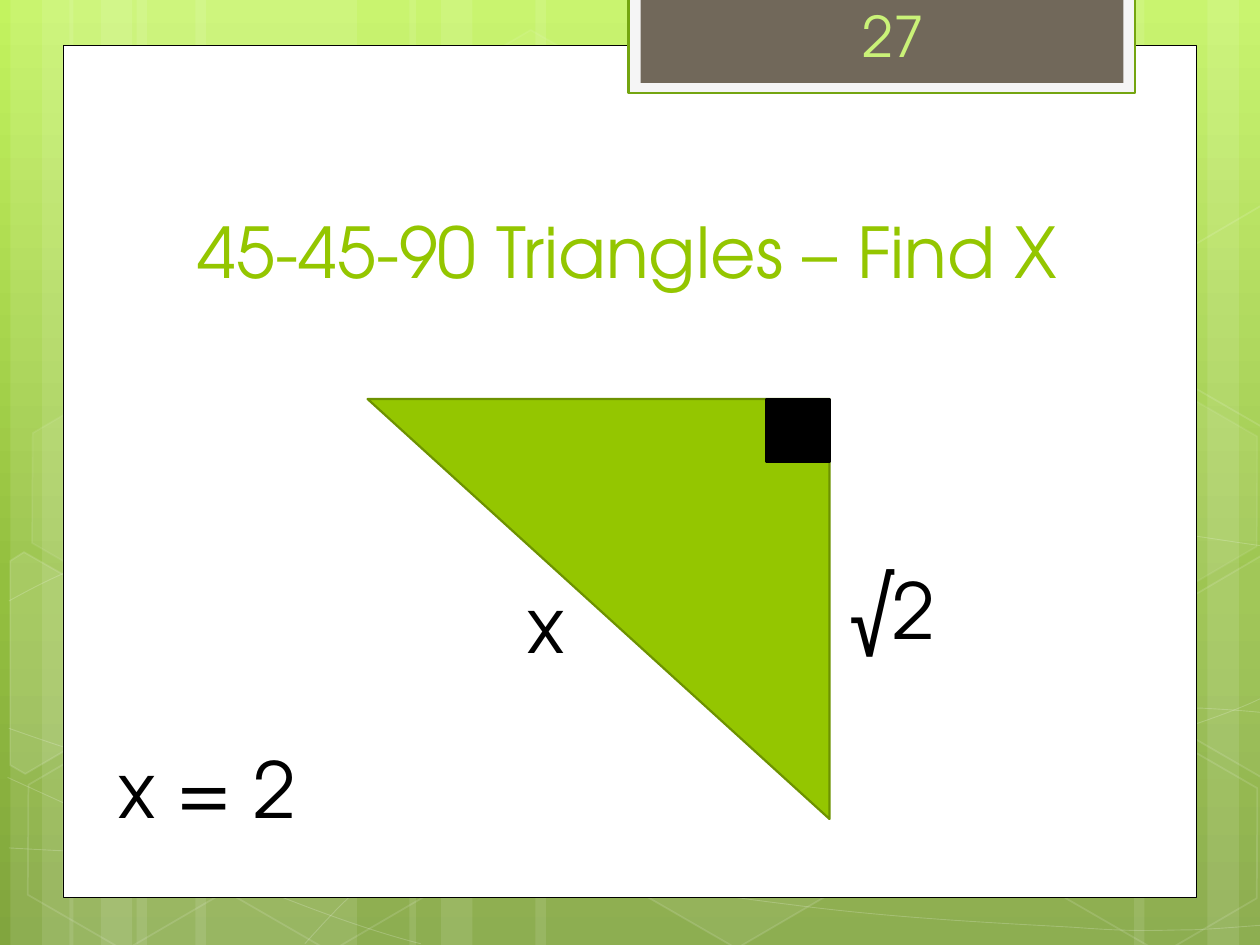
import math
from pptx import Presentation, util as u
from pptx.dml.color import RGBColor
from pptx.enum import shapes as s, text as t
from pptx.oxml.ns import qn
from lxml import etree

WHITE, BLACK = RGBColor(255, 255, 255), RGBColor(0, 0, 0)
GREEN, EDGE = RGBColor(0x94, 0xC6, 0x00), RGBColor(0x6D, 0x92, 0x00)
LIME, RIM = RGBColor(0xCA, 0xF2, 0x78), RGBColor(0x74, 0xA5, 0x10)
PALE, BROWN = RGBColor(0xF5, 0xF5, 0xF5), RGBColor(0x71, 0x68, 0x5A)
SKY = [(0, "C3F35F"), (62, "93BF3F"), (100, "81A53E")]
FONT = "TeX Gyre Adventor"
COLS, ROWS = 120, 90  # the slide's grid
CELL = u.Inches(10) / COLS

# Waves as Bezier runs, in inches: a start, then three points for each curve
WAVES = [
    [(.07, 6.73), (.61, 6.76), (1.15, 6.79), (1.9, 6.78), (2.65, 6.77), (3.58, 6.75),
     (4.58, 6.65), (5.58, 6.55), (7, 6.36), (7.92, 6.17), (8.83, 5.98), (9.77, 5.68),
     (10.07, 5.51)],
    [(.07, 4.77), (.36, 4.61), (.65, 4.46), (1.21, 4.31), (1.78, 4.16), (2.59, 3.94),
     (3.47, 3.87), (4.36, 3.8), (5.44, 3.79), (6.54, 3.87), (7.64, 3.95), (9.47, 4.26),
     (10.07, 4.34)],
    [(.06, 6.17), (1.27, 6.72), (2.47, 7.27), (3.34, 7.49)],
    [(.07, 5.78), (.38, 5.89), (.7, 6), (1.28, 6.16), (1.86, 6.31), (2.73, 6.56),
     (3.57, 6.73), (4.4, 6.9), (5.45, 7.08), (6.28, 7.18), (7.11, 7.29), (8, 7.33),
     (8.53, 7.36), (9.05, 7.4), (9.19, 7.38), (9.45, 7.38), (9.71, 7.37), (9.89, 7.35),
     (10.07, 7.34)],
    [(2.42, 7.49), (2.6, 7.29), (2.78, 7.09), (3.02, 6.91), (3.26, 6.73), (3.6, 6.53),
     (3.88, 6.39), (4.16, 6.25), (4.33, 6.19), (4.7, 6.09), (5.06, 5.99), (5.73, 5.85),
     (6.08, 5.78), (6.44, 5.71), (6.49, 5.71), (6.8, 5.69), (7.11, 5.66), (7.6, 5.63),
     (7.94, 5.62), (8.29, 5.61), (8.86, 5.62), (8.86, 5.62), (9.08, 5.62), (9.31, 5.62),
     (9.53, 5.62), (9.71, 5.63), (9.88, 5.64), (10.06, 5.66)],
]
# Hexagons: left, top, fill and line opacity
HEXES = [(40.1, 4.3, 4, 8), (59.6, 70.7, 6, 12), (1.3, 70.9, 0, 12), (1.7, 37.4, 7, 8),
         (20.9, 71, 0, 12), (100.1, 71.2, 0, 12), (100.1, 37.7, 7, 8)]
# Hexagons cut by the slide's edge, in inches: middle, corners, fill opacity
CUTS = [
    ((.36, 5.35), [(.08, 4.45), (.19, 4.38), (.96, 4.82), (.95, 5.7), (.2, 6.14),
                   (.08, 6.07)], 10),
    ((9.85, 5.2), [(9.26, 4.85), (10.01, 4.41), (10.09, 4.46), (10.09, 6.13),
                   (10.02, 6.17), (9.26, 5.73)], 4),
    ((9.85, 2.41), [(9.26, 2.07), (10.01, 1.63), (10.1, 1.68), (10.09, 3.35),
                    (10.02, 3.39), (9.26, 2.95)], 0),
]
TILT = 30


def span(*cells):
    return [round(n * CELL) for n in cells]


def tint(fill, color, alpha):
    fill.solid()
    fill.fore_color.rgb = color
    if alpha < 100:
        clr = fill._xPr.find(qn("a:solidFill"))[0]
        etree.SubElement(clr, qn("a:alpha"), val=str(alpha * 1000))


def style(shape, fill=None, line=None, width=1.25, alpha=100, fade=100):
    shape.shadow.inherit = False
    if fill is None or alpha == 0:
        shape.fill.background()
    else:
        tint(shape.fill, fill, alpha)
    if line is None:
        shape.line.fill.background()
    else:
        tint(shape.line.fill, line, fade)
        shape.line.width = u.Pt(width)


def block(page, kind, box, turn=0, **look):
    shape = page.shapes.add_shape(kind, *span(*box))
    shape.rotation = turn
    style(shape, **look)
    return shape


def trace(page, pts, close, **look):
    pts = [(u.Inches(x), u.Inches(y)) for x, y in pts]
    pen = page.shapes.build_freeform(*pts[0])
    pen.add_line_segments(pts[1:], close=close)
    shape = pen.convert_to_shape()
    style(shape, **look)
    return shape


def bend(shape):
    """Join each three line steps into one Bezier curve."""
    lines = list(shape._element.iter(qn("a:lnTo")))
    for i in range(0, len(lines), 3):
        first, *rest = lines[i:i + 3]
        first.tag = qn("a:cubicBezTo")
        for step in rest:
            first.append(step[0])
            step.getparent().remove(step)


def level(mid, pts):
    """Turn points back by the tilt about a middle."""
    c, n = math.cos(math.radians(TILT)), math.sin(math.radians(TILT))
    (a, b) = mid
    return [(a + (x - a) * c + (y - b) * n, b - (x - a) * n + (y - b) * c)
            for x, y in pts]


def sky(page):
    fill = page.background.fill
    fill.gradient()
    fill.gradient_angle = 270
    stops = fill._fill._gradFill.find(qn("a:gsLst"))
    for stop in list(stops):
        stops.remove(stop)
    for pos, color in SKY:
        stop = etree.SubElement(stops, qn("a:gs"), pos=str(pos * 1000))
        etree.SubElement(stop, qn("a:srgbClr"), val=color)


def decor(page):
    # Stripes: three widths from each base, the third set mirrored
    for base, side, wide in ((1, 1, 21), (6.6, 1, 21), (121, -1, 21), (39, 1, 37)):
        for gap, w in ((12, wide), (0, 6), (3, 10)):
            left = base + gap if side > 0 else base - gap - w
            block(page, s.MSO_SHAPE.RECTANGLE, (left, 0, w, ROWS), fill=WHITE, alpha=10)
    for pts in WAVES:
        bend(trace(page, pts, False, line=WHITE, width=.5, fade=20))
    for x, y, alpha, fade in HEXES:
        cell = block(page, s.MSO_SHAPE.HEXAGON, (x, y, 21, 18.2), TILT, fill=WHITE,
                     alpha=alpha, line=WHITE, width=1, fade=fade)
        cell.adjustments[0], cell.adjustments[1] = .285, 1.155
    for mid, pts, alpha in CUTS:
        cut = trace(page, level(mid, pts), True, fill=WHITE, alpha=alpha, line=WHITE,
                    width=1, fade=12)
        cut.rotation = TILT


def label(page, words, box, size=44, color=BLACK, pad=0):
    note = page.shapes.add_textbox(*span(*box))
    frame = note.text_frame
    frame.word_wrap = True
    frame.margin_left = u.Inches(.1 + pad)
    write(frame, words, size, color)


def write(frame, words, size, color):
    frame.text = words
    font = frame.paragraphs[0].font
    font.name, font.size, font.color.rgb = FONT, u.Pt(size), color


def panel(page, box):
    rect = s.MSO_SHAPE.RECTANGLE
    block(page, rect, box, fill=WHITE, line=BLACK, width=.5)
    # Number tab
    block(page, rect, (59.85, -.2, 48.25, 9.1), fill=PALE, line=RIM)
    block(page, rect, (61, -.2, 46, 8.1), fill=BROWN)


def head(page, words, box):
    title = page.shapes.title
    title.left, title.top, title.width, title.height = span(*box)
    frame = title.text_frame
    write(frame, words, 40, GREEN)
    frame.word_wrap = True
    frame.auto_size = t.MSO_AUTO_SIZE.NONE
    frame.vertical_anchor = t.MSO_ANCHOR.BOTTOM
    frame.paragraphs[0].alignment = t.PP_ALIGN.CENTER
    page.shapes._spTree.append(title._element)  # in front of the panel


def figure(page, box):
    x, y, w, h = box
    block(page, s.MSO_SHAPE.RIGHT_TRIANGLE, box, 180, fill=GREEN, line=EDGE)
    mark = 6
    block(page, s.MSO_SHAPE.RECTANGLE, (x + w - mark, y, mark, mark), 180,
          fill=BLACK, line=BLACK)
    # Side lengths and answer
    for words, dx, dy, wide in (("√2", 40, 15, 19), ("x", 10, 16.3, 12),
                                ("x = 2", -29, 32, 35)):
        label(page, words, (x + dx, y + dy, wide, 10.1), pad=.34)


def main():
    deck = Presentation()
    deck.slide_width, deck.slide_height = span(COLS, ROWS)
    page = deck.slides.add_slide(deck.slide_layouts[5])
    sky(page)
    decor(page)
    panel(page, (6, 4.3, 108, 81.2))
    head(page, "45-45-90 Triangles – Find X", (13.7, 13.5, 92.2, 15))
    figure(page, (35, 38, 44, 40))
    label(page, "27", (81, -.4, 14.5, 7.7), 32, LIME)
    deck.save("out.pptx")


if __name__ == "__main__":
    main()
